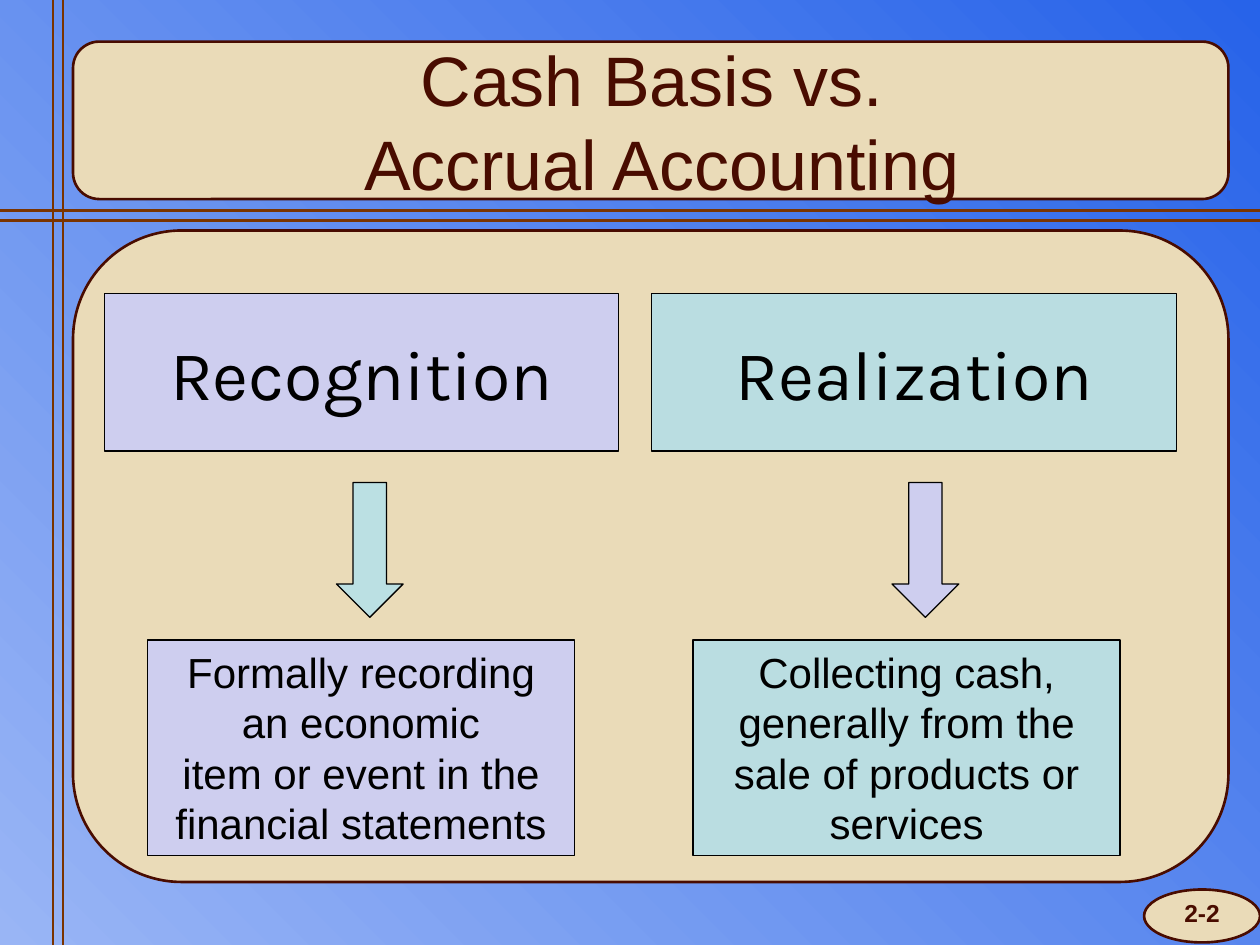
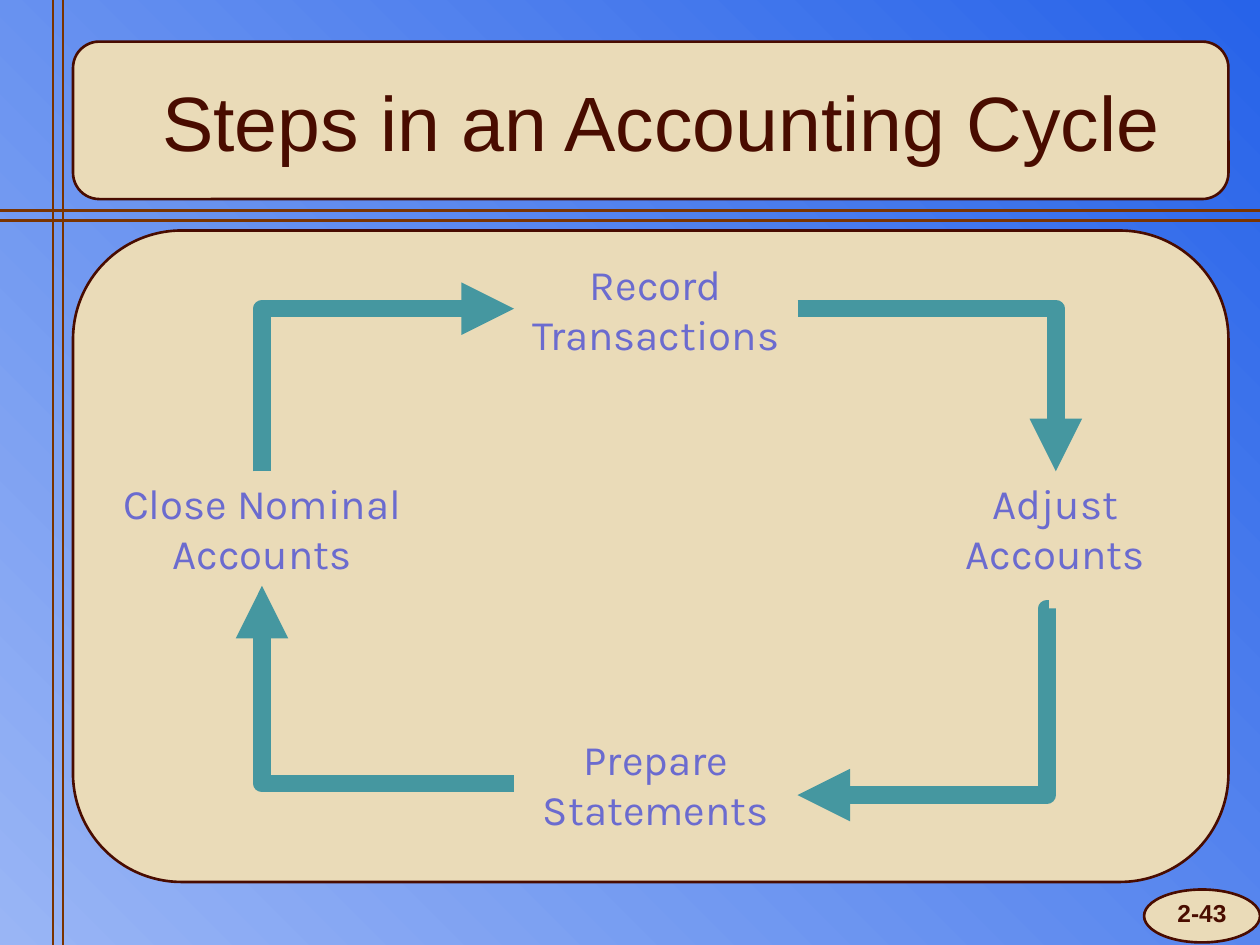
from dataclasses import dataclass

from lxml import etree
from pptx import Presentation
from pptx import util as u
from pptx.dml.color import RGBColor
from pptx.enum import shapes, text
from pptx.oxml import ns

SHAPE = shapes.MSO_SHAPE
CENTER = text.PP_ALIGN.CENTER
TOP, MIDDLE = text.MSO_ANCHOR.TOP, text.MSO_ANCHOR.MIDDLE


@dataclass(frozen=True)
class Theme:
    # Colours
    sky_light: str = "99B5F5"
    sky_dark: str = "2763E9"
    sand: str = "EADBB8"
    maroon: str = "490C00"
    rule: str = "7A3400"
    ink: str = "000000"
    lilac: str = "CECEEF"
    aqua: str = "BADDE1"
    aqua_arrow: str = "BBE0E3"
    teal: str = "4597A0"
    violet: str = "6B6BCF"
    # Fonts and type sizes
    plain: str = "Arial"
    display: str = "Karla"
    title: int = 44
    long_title: int = 40
    heading: int = 40
    body: int = 24
    number: int = 14
    # Line widths
    thin: float = 0.75
    frame: float = 1.5
    cycle: float = 10


def colour(value):
    return RGBColor.from_string(value)


def inches(*lengths):
    return [u.Inches(length) for length in lengths]


class SlideBuilder:
    def __init__(self, deck, theme):
        self.deck = deck
        self.theme = theme
        self.page = None

    def start(self, title_lines, title_size, number):
        """Add a page with the shared background, frame, number and title."""
        theme = self.theme
        layout = self.deck.slide_layouts.get_by_name("Title Only")
        self.page = self.deck.slides.add_slide(layout)

        # Background
        fill = self.page.background.fill
        fill.gradient()
        fill.gradient_angle = 45
        ends = (theme.sky_light, theme.sky_dark)
        for position, (stop, shade) in enumerate(zip(fill.gradient_stops, ends)):
            stop.position = position
            stop.color.rgb = colour(shade)

        # Panels and double rules
        panels = [
            (SHAPE.OVAL, (9.08, 7.06, 0.92, 0.42)),
            (SHAPE.ROUNDED_RECTANGLE, (0.58, 0.33, 9.17, 1.25)),
            (SHAPE.ROUNDED_RECTANGLE, (0.58, 1.83, 9.17, 5.17)),
        ]
        for kind, place in panels:
            self.shape(kind, place, theme.sand, theme.maroon, theme.frame)
        for x in (0.42, 0.5):
            self.line((x, 0), (x, 7.5), theme.rule, theme.frame)
        for y in (1.67, 1.75):
            self.line((0, y), (10, y), theme.rule, theme.frame)

        # Page number
        self.text_box((9.08, 7.08, 0.92, 0.42), number, theme.plain,
                      theme.number, theme.maroon, bold=True)

        # Title, brought in front of its panel
        title = self.page.shapes.title
        title.left, title.top, title.width, title.height = inches(0.75, 0.33, 9, 1.25)
        title.element.getparent().append(title.element)
        frame = title.text_frame
        frame.auto_size = text.MSO_AUTO_SIZE.NONE
        frame.vertical_anchor = MIDDLE
        para = frame.paragraphs[0]
        para.alignment = CENTER
        for index, words in enumerate(title_lines):
            if index:
                para.add_line_break()
            self.span(para, words, theme.plain, title_size, theme.maroon)

    def span(self, para, words, font, size, shade, bold=False):
        span = para.add_run()
        span.text = words
        span.font.name = font
        span.font.size = u.Pt(size)
        span.font.bold = bold
        span.font.color.rgb = colour(shade)

    def fill_text(self, box, paragraphs, font, size, shade, anchor=TOP, bold=False):
        frame = box.text_frame
        frame.word_wrap = True
        frame.vertical_anchor = anchor
        for index, words in enumerate(paragraphs):
            para = frame.add_paragraph() if index else frame.paragraphs[0]
            para.alignment = CENTER
            self.span(para, words, font, size, shade, bold)

    def text_box(self, place, words, font, size, shade, bold=False):
        box = self.page.shapes.add_textbox(*inches(*place))
        self.fill_text(box, [words], font, size, shade, bold=bold)

    def shape(self, kind, place, fill, line, width):
        box = self.page.shapes.add_shape(kind, *inches(*place))
        box.shadow.inherit = False
        box.fill.solid()
        box.fill.fore_color.rgb = colour(fill)
        box.line.color.rgb = colour(line)
        box.line.width = u.Pt(width)
        return box

    def line(self, start, end, shade, width, kind=shapes.MSO_CONNECTOR.STRAIGHT):
        link = self.page.shapes.add_connector(kind, *inches(*start, *end))
        link.line.color.rgb = colour(shade)
        link.line.width = u.Pt(width)
        etree.SubElement(link.element.spPr, ns.qn("a:effectLst"))
        return link

    def elbow(self, start, end, upright_first=False, bend=None):
        """Draw a bent arrow; bend is the turning point in 1/1000 percent."""
        if upright_first:
            # A quarter turn swaps width and height around the same centre
            (x1, y1), (x2, y2) = start, end
            middle_x, middle_y = (x1 + x2) / 2, (y1 + y2) / 2
            half_w, half_h = abs(y2 - y1) / 2, abs(x2 - x1) / 2
            start = (middle_x - half_w, middle_y - half_h)
            end = (middle_x + half_w, middle_y + half_h)
        link = self.line(start, end, self.theme.teal, self.theme.cycle,
                         shapes.MSO_CONNECTOR.ELBOW)
        properties = link.element.spPr
        if upright_first:
            properties.find(ns.qn("a:xfrm")).set("rot", str(270 * 60000))
        geometry = properties.find(ns.qn("a:prstGeom"))
        if bend is None:
            geometry.set("prst", "bentConnector2")
        else:
            guides = geometry.find(ns.qn("a:avLst"))
            if guides is None:
                guides = etree.SubElement(geometry, ns.qn("a:avLst"))
            etree.SubElement(guides, ns.qn("a:gd"), name="adj1", fmla=f"val {bend}")
        outline = properties.find(ns.qn("a:ln"))
        etree.SubElement(outline, ns.qn("a:tailEnd"), type="triangle")

    def card(self, place, paragraphs, fill, font, size, anchor=TOP):
        theme = self.theme
        box = self.shape(SHAPE.RECTANGLE, place, fill, theme.ink, theme.thin)
        self.fill_text(box, paragraphs, font, size, theme.ink, anchor)


def add_comparison(builder):
    theme = builder.theme
    builder.start(["Cash Basis vs. ", "Accrual Accounting"], theme.long_title, "2-2")
    # Term, heading left and width, arrow left, detail left, fills, detail
    columns = [
        ("Recognition", 0.83, 4.08, 2.67, 1.17, theme.lilac, theme.aqua_arrow,
         ["Formally recording an economic", "item or event in the",
          "financial statements"]),
        ("Realization", 5.17, 4.17, 7.08, 5.5, theme.aqua, theme.lilac,
         ["Collecting cash, generally from the sale of products or services"]),
    ]
    for term, left, width, arrow_left, detail_left, fill, arrow_fill, detail in columns:
        builder.card((left, 2.33, width, 1.25), [term], fill,
                     theme.display, theme.heading, MIDDLE)
        builder.shape(SHAPE.DOWN_ARROW, (arrow_left, 3.83, 0.53, 1.07),
                      arrow_fill, theme.ink, theme.thin)
        builder.card((detail_left, 5.08, 3.39, 1.71), detail, fill,
                     theme.plain, theme.body)


def add_cycle(builder):
    theme = builder.theme
    builder.start(["Steps in an Accounting Cycle"], theme.title, "2-43")
    # Steps, clockwise from the top
    steps = [
        ("Record Transactions", 4.08, 2, 2.25),
        ("Adjust Accounts", 7.25, 3.74, 2.25),
        ("Prepare Statements", 4.08, 5.77, 2.25),
        ("Close Nominal Accounts", 0.83, 3.74, 2.5),
    ]
    for words, left, top, width in steps:
        builder.text_box((left, top, width, 0.91), words, theme.display,
                         theme.body, theme.violet)
    # Arrows between the steps
    builder.elbow((6.33, 2.45), (8.38, 3.74))
    builder.elbow((8.33, 4.83), (6.33, 6.31), bend=1000)
    builder.elbow((4.08, 6.22), (2.08, 4.65))
    builder.elbow((2.08, 3.74), (4.08, 2.45), upright_first=True)


def main():
    deck = Presentation()
    deck.slide_width, deck.slide_height = inches(10, 7.5)
    builder = SlideBuilder(deck, Theme())
    add_comparison(builder)
    add_cycle(builder)
    deck.save("out.pptx")


if __name__ == "__main__":
    main()
